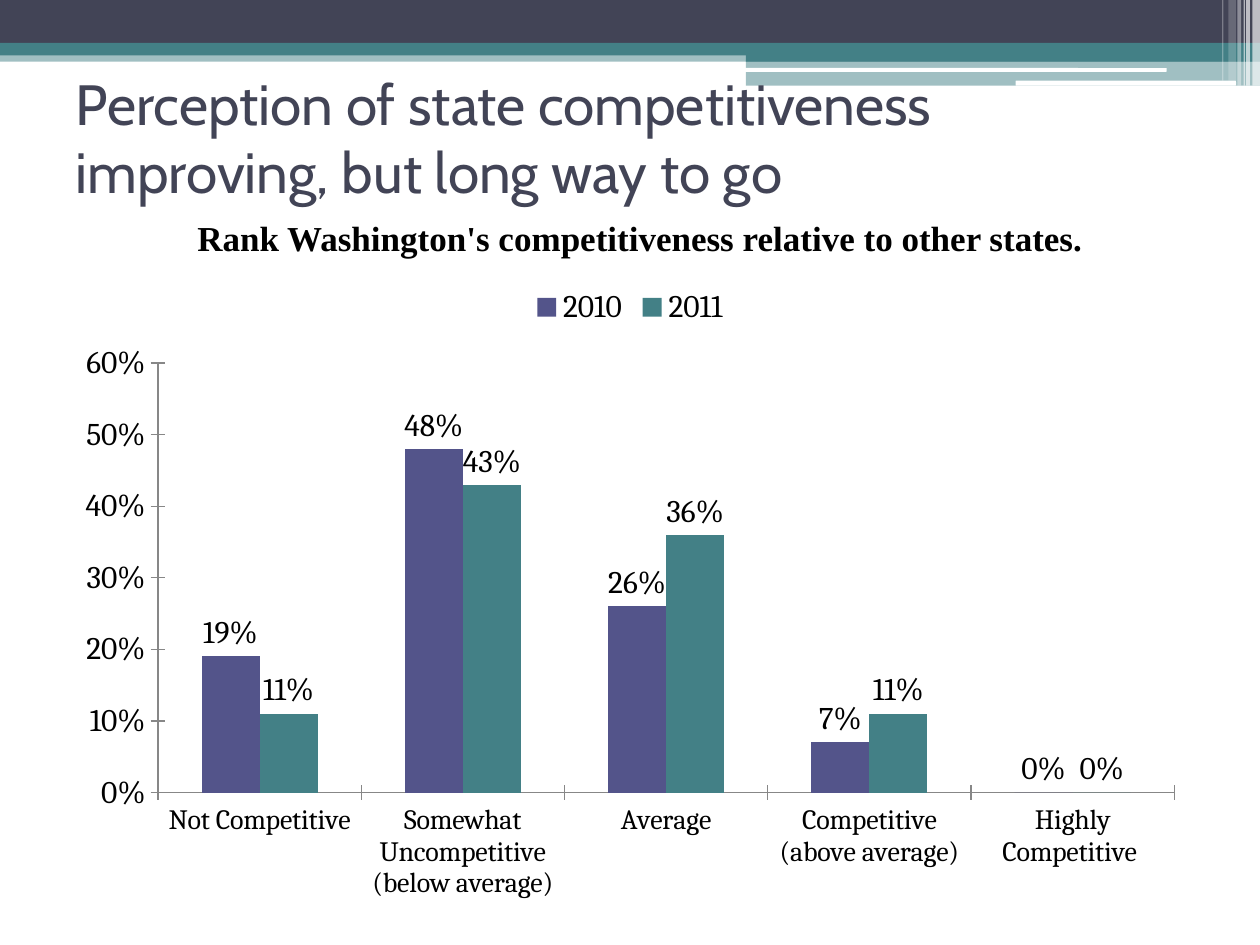
from collections import namedtuple

from lxml.etree import SubElement
from pptx import Presentation
from pptx.chart.data import CategoryChartData
from pptx.dml.color import RGBColor
from pptx.enum.chart import XL_CHART_TYPE, XL_LABEL_POSITION, XL_LEGEND_POSITION, XL_TICK_MARK
from pptx.enum.shapes import MSO_SHAPE
from pptx.enum.text import MSO_ANCHOR, PP_ALIGN
from pptx.oxml.ns import qn
from pptx.util import Inches, Pt

# The slide is a grid of 100 columns by 75 rows.
COLUMNS, ROWS = 100, 75
CELL = Inches(0.1)
NAVY, TEAL, VIOLET, WHITE, BLACK, GREY = "424456", "438086", "53548A", "FFFFFF", "000000", "878787"

Box = namedtuple("Box", "left top width height")


def color(hex_text):
    return RGBColor.from_string(hex_text)


def place(box):
    return [round(length * CELL) for length in box]


def inside(box, left, top, width, height):
    """Move a box given relative to another one onto the slide grid."""
    return Box(box.left + left, box.top + top, width, height)


def format_font(font, size, name, fill=BLACK, bold=False):
    font.size, font.name, font.bold = Pt(size), name, bold
    font.color.rgb = color(fill)


def write(frame, text, size, name, fill=BLACK, bold=False, align=PP_ALIGN.LEFT, anchor=MSO_ANCHOR.TOP):
    frame.word_wrap = True
    frame.vertical_anchor = anchor
    para = frame.paragraphs[0]
    para.alignment = align
    span = para.add_run()
    span.text = text
    format_font(span.font, size, name, fill, bold)


def add_bar(page, box, fill, opacity=100, kind=MSO_SHAPE.RECTANGLE):
    bar = page.shapes.add_shape(kind, *place(box))
    bar.shadow.inherit = False
    bar.line.fill.background()
    bar.fill.solid()
    bar.fill.fore_color.rgb = color(fill)
    if opacity < 100:
        tint = bar.fill._xPr.find(".//" + qn("a:srgbClr"))
        SubElement(tint, qn("a:alpha"), val=str(opacity * 1000))


def add_header_band(page, box):
    step = 59.2  # column where the band steps down
    bars = [
        (0, 4, box.width, 0.9, TEAL, 50),
        (0, 0, box.width, 3.4, NAVY, 100),
        (0, 3.4, box.width, 1, TEAL, 100),
        (step, 3.9, box.width - step, 1, TEAL, 100),
        (step, 4.8, box.width - step, 2, TEAL, 50),
    ]
    for *area, fill, opacity in bars:
        add_bar(page, inside(box, *area), fill, opacity)
    for area in [(59.1, 5.4, 33.5, 0.3), (80.6, 6.4, 17.5, 0.4)]:
        add_bar(page, inside(box, *area), WHITE, kind=MSO_SHAPE.ROUNDED_RECTANGLE)
    stripes = [(99.4, 0.6, 6.8, 65), (98.9, 0.3, 6.8, 65), (98.7, 0.1, 6.8, 60),
               (98.2, 0.3, 6.8, 40), (97.5, 0.6, 6.4, 20), (97, 0.1, 6.4, 30)]
    for left, width, height, opacity in stripes:
        add_bar(page, inside(box, left, 0, width, height), WHITE, opacity)


def add_title(page, box, text):
    title = page.shapes.title
    title.left, title.top, title.width, title.height = place(box)
    write(title.text_frame, text, 32.4, "Cabin", fill=NAVY, anchor=MSO_ANCHOR.MIDDLE)
    page.shapes._spTree.append(title._element)  # in front of the band


def add_subtitle(page, box, text):
    frame = page.shapes.add_textbox(*place(box)).text_frame
    write(frame, text, 20, "Times New Roman", bold=True, align=PP_ALIGN.CENTER)


def add_ranking_chart(page, box):
    data = CategoryChartData(number_format="0%")
    data.categories = ["Not Competitive", "Somewhat Uncompetitive (below average)", "Average",
                       "Competitive (above average)", "Highly Competitive "]
    data.add_series("2010", [0.19, 0.48, 0.26, 0.07, 0])
    data.add_series("2011", [0.11, 0.43, 0.36, 0.11, 0])
    chart = page.shapes.add_chart(XL_CHART_TYPE.COLUMN_CLUSTERED, *place(box), data).chart
    format_font(chart.font, 18, "Cambria")
    chart.has_title = False
    chart.has_legend = True
    chart.legend.position = XL_LEGEND_POSITION.TOP
    chart.legend.include_in_layout = False

    for axis, size in [(chart.category_axis, 16), (chart.value_axis, 18)]:
        axis.has_major_gridlines = False
        axis.major_tick_mark = XL_TICK_MARK.CROSS
        axis.minor_tick_mark = XL_TICK_MARK.NONE
        axis.format.line.color.rgb = color(GREY)
        format_font(axis.tick_labels.font, size, "Cambria")
    values = chart.value_axis
    values.minimum_scale, values.maximum_scale, values.major_unit = 0, 0.6, 0.1
    values.tick_labels.number_format = "0%"
    values.tick_labels.number_format_is_linked = False

    plot = chart.plots[0]
    plot.gap_width, plot.overlap, plot.vary_by_categories = 150, 0, False
    for series, fill in zip(plot.series, [VIOLET, TEAL]):
        series.format.fill.solid()
        series.format.fill.fore_color.rgb = color(fill)
        labels = series.data_labels
        labels.show_value = True
        labels.position = XL_LABEL_POSITION.OUTSIDE_END
        labels.number_format, labels.number_format_is_linked = "0%", False
        format_font(labels.font, 18, "Cambria")


def main():
    deck = Presentation()
    deck.slide_width, deck.slide_height = COLUMNS * CELL, ROWS * CELL
    page = deck.slides.add_slide(deck.slide_layouts[5])
    add_header_band(page, Box(0, 0, COLUMNS, 6.8))
    add_title(page, Box(5, 6.7, 90, 8.3),
              "Perception of state competitiveness improving, but long way to go")
    add_subtitle(page, Box(5.8, 16.7, 90, 4.4),
                 "Rank Washington's competitiveness relative to other states.")
    add_ranking_chart(page, Box(5, 21.7, 90, 50.7))
    deck.save("out.pptx")


if __name__ == "__main__":
    main()
